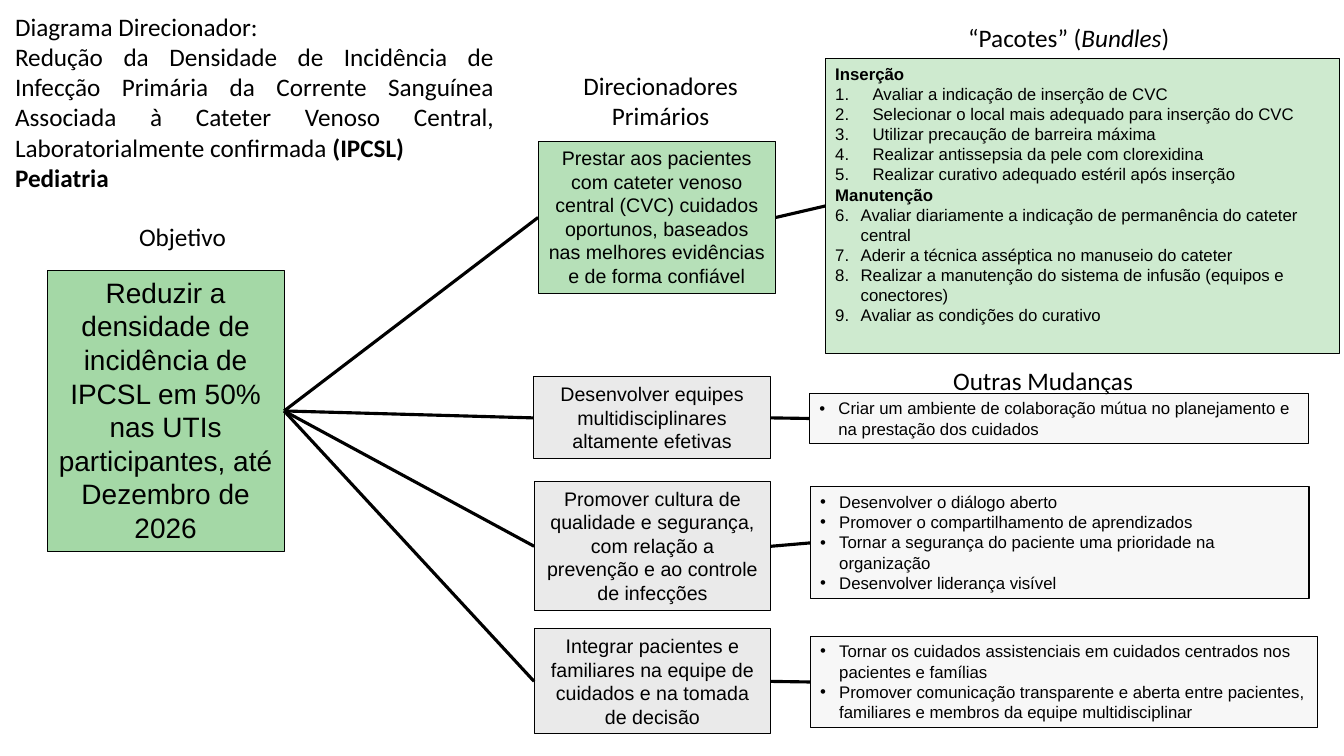
import lxml.etree
import pptx
import pptx.dml.color
import pptx.enum.shapes
import pptx.enum.text
import pptx.oxml.ns
import pptx.util

Cm = pptx.util.Cm
Pt = pptx.util.Pt
Align = pptx.enum.text.PP_ALIGN
qn = pptx.oxml.ns.qn

INK = {
    "black": "000000",
    "goal": "A4D8A6",
    "care": "B6E0B8",
    "pack": "CEEACF",
    "team": "EAEAEA",
    "change": "F7F7F7",
}
RIGHT, LEFT = 3, 1

GOAL = "Reduzir a densidade de incidência de IPCSL em 50% nas UTIs participantes, até Dezembro de 2026"

INSERT = [
    "Avaliar a indicação de inserção de CVC",
    "Selecionar o local mais adequado para inserção do CVC",
    "Utilizar precaução de barreira máxima",
    "Realizar antissepsia da pele com clorexidina",
    "Realizar curativo adequado estéril após inserção",
]
KEEP = [
    "Avaliar diariamente a indicação de permanência do cateter central",
    "Aderir a técnica asséptica no manuseio do cateter",
    "Realizar a manutenção do sistema de infusão (equipos e conectores)",
    "Avaliar as condições do curativo",
]

CARE = ("Prestar aos pacientes com cateter venoso central (CVC) cuidados oportunos, "
        "baseados nas melhores evidências e de forma confiável")

TEAMS = [
    ("Desenvolver equipes multidisciplinares altamente efetivas",
     (13.44, 9.5, 5.99, 2.06),
     ["Criar um ambiente de colaboração mútua no planejamento e na prestação dos cuidados"],
     (20.4, 9.91, 12.57, 1.27)),
    ("Promover cultura de qualidade e segurança, com relação a prevenção e ao controle de infecções",
     (13.46, 12.14, 5.97, 3.25),
     ["Desenvolver o diálogo aberto",
      "Promover o compartilhamento de aprendizados",
      "Tornar a segurança do paciente uma prioridade na organização",
      "Desenvolver liderança visível"],
     (20.42, 12.27, 12.57, 2.82)),
    ("Integrar pacientes e familiares na equipe de cuidados e na tomada de decisão",
     (13.46, 15.85, 5.97, 2.64),
     ["Tornar os cuidados assistenciais em cuidados centrados nos pacientes e famílias",
      "Promover comunicação transparente e aberta entre pacientes, familiares e membros "
      "da equipe multidisciplinar"],
     (20.42, 16.03, 12.78, 2.31)),
]


def color(name):
    return pptx.dml.color.RGBColor.from_string(INK[name])


def plain(text, style=""):
    return [(text, style)], None


def bullets(items):
    return [([(item, "")], (0.48, "buChar", {"char": "•"})) for item in items]


def numbers(items, start, indent):
    mark = (indent, "buAutoNum", {"type": "arabicPeriod", "startAt": str(start)})
    return [([(item, "")], mark) for item in items]


def add_mark(para, mark):
    indent, tag, attrs = mark
    props = para._p.get_or_add_pPr()
    props.set("marL", str(Cm(indent)))
    props.set("indent", str(-Cm(indent)))
    lxml.etree.SubElement(props, qn("a:buFont"), typeface="Arial")
    lxml.etree.SubElement(props, qn("a:" + tag), attrs)


def write(shape, paras, size, font, align):
    frame = shape.text_frame
    frame.word_wrap = True
    frame.vertical_anchor = pptx.enum.text.MSO_ANCHOR.TOP
    for index, (runs, mark) in enumerate(paras):
        para = frame.add_paragraph() if index else frame.paragraphs[0]
        para.alignment = align
        if mark:
            add_mark(para, mark)
        for text, style in runs:
            run = para.add_run()
            run.text = text
            run.font.name = font
            run.font.size = Pt(size)
            run.font.bold = style == "b"
            run.font.italic = style == "i"
            run.font.color.rgb = color("black")


def add_box(slide, place, fill, paras, size, align=Align.CENTER):
    kind = pptx.enum.shapes.MSO_SHAPE.RECTANGLE
    box = slide.shapes.add_shape(kind, *map(Cm, place))
    box.shadow.inherit = False
    box.fill.solid()
    box.fill.fore_color.rgb = color(fill)
    box.line.color.rgb = color("black")
    box.line.width = Pt(0.75)
    write(box, paras, size, "Arial", align)
    return box


def add_label(slide, place, paras, align=Align.CENTER):
    label = slide.shapes.add_textbox(*map(Cm, place))
    write(label, paras, 18, "Calibri", align)


def join(slide, start, end):
    kind = pptx.enum.shapes.MSO_CONNECTOR.STRAIGHT
    line = slide.shapes.add_connector(kind, 0, 0, 0, 0)
    line.begin_connect(start, RIGHT)
    line.end_connect(end, LEFT)
    line.line.color.rgb = color("black")
    line.line.width = Pt(2.25)
    lxml.etree.SubElement(line._element.spPr, qn("a:effectLst"))


def add_labels(slide):
    title = [
        plain("Diagrama Direcionador:"),
        ([("Redução da Densidade de Incidência de Infecção Primária da Corrente Sanguínea "
           "Associada à Cateter Venoso Central, Laboratorialmente confirmada ", ""),
          ("(IPCSL)", "b")], None),
        plain("Pediatria", "b"),
    ]
    packs = [([("“Pacotes” (", ""), ("Bundles", "i"), (")", "")], None)]
    add_label(slide, (0.13, 0.15, 12.57, 4.88), title, Align.JUSTIFY)
    add_label(slide, (2.21, 5.44, 4.78, 1.02), [plain("Objetivo")])
    add_label(slide, (13.46, 1.65, 6.38, 1.8), [plain("Direcionadores Primários")])
    add_label(slide, (21.79, 0.43, 10.29, 1.02), packs)
    add_label(slide, (23.77, 9.07, 7.82, 1.02), [plain("Outras Mudanças")], Align.LEFT)


def main():
    deck = pptx.Presentation()
    deck.slide_width = Cm(33.87)
    deck.slide_height = Cm(19.05)
    slide = deck.slides.add_slide(deck.slide_layouts[6])

    goal = add_box(slide, (1.19, 6.81, 5.97, 7.09), "goal", [plain(GOAL)], 20)
    care = add_box(slide, (13.56, 3.56, 5.99, 3.84), "care", [plain(CARE)], 14)
    steps = [plain("Inserção", "b"), *numbers(INSERT, 1, 0.94),
             plain("Manutenção", "b"), *numbers(KEEP, len(INSERT) + 1, 0.64)]
    pack = add_box(slide, (20.8, 1.47, 12.95, 7.44), "pack", steps, 12, Align.LEFT)
    pairs = [(care, pack)]
    for text, place, items, spot in TEAMS:
        team = add_box(slide, place, "team", [plain(text)], 14)
        change = add_box(slide, spot, "change", bullets(items), 12, Align.LEFT)
        pairs.append((team, change))
    for driver, change in pairs:
        join(slide, goal, driver)
        join(slide, driver, change)
    add_labels(slide)

    deck.save("out.pptx")


if __name__ == "__main__":
    main()
